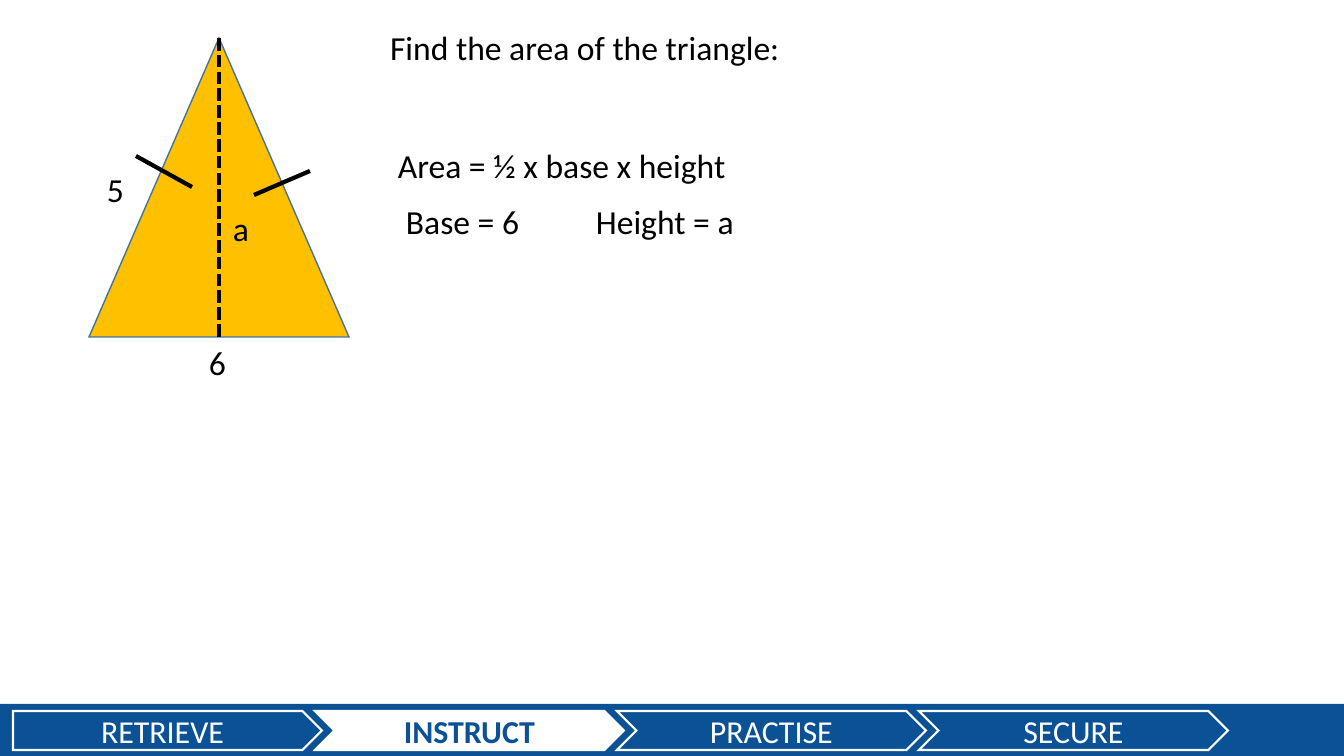
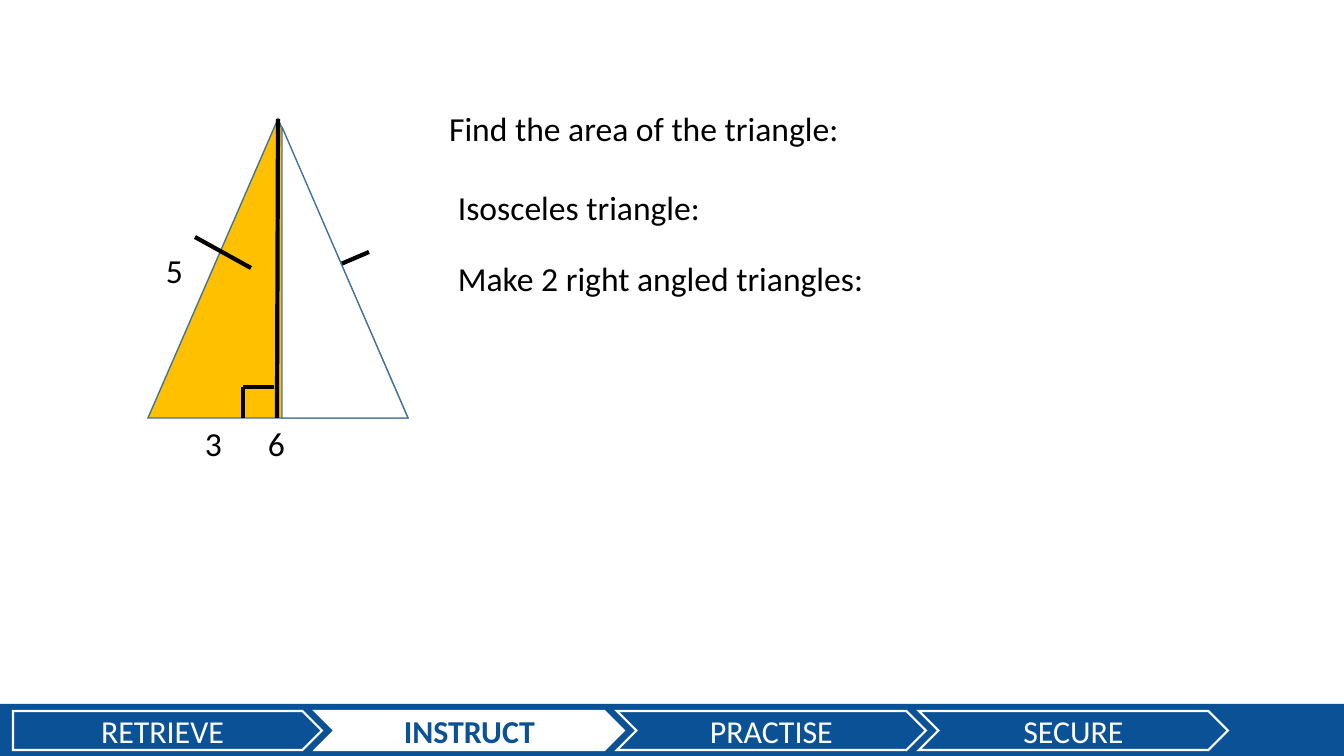
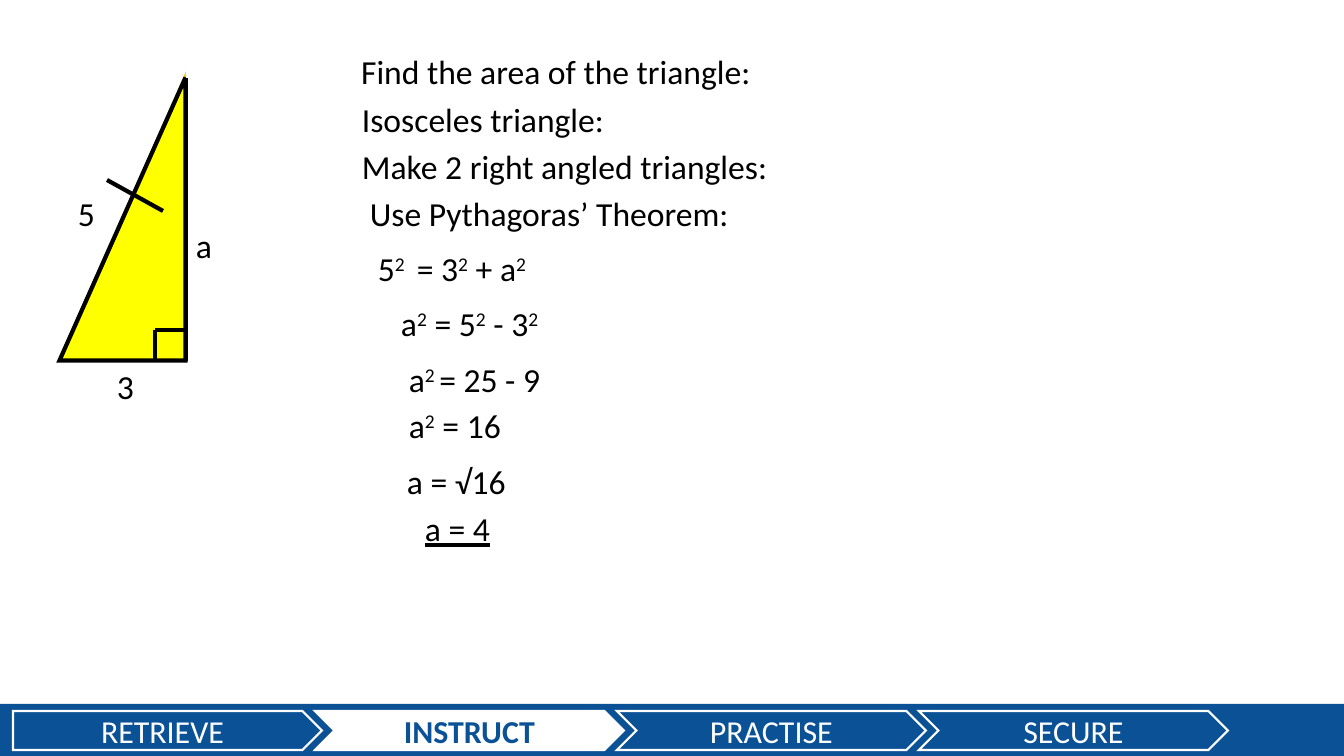
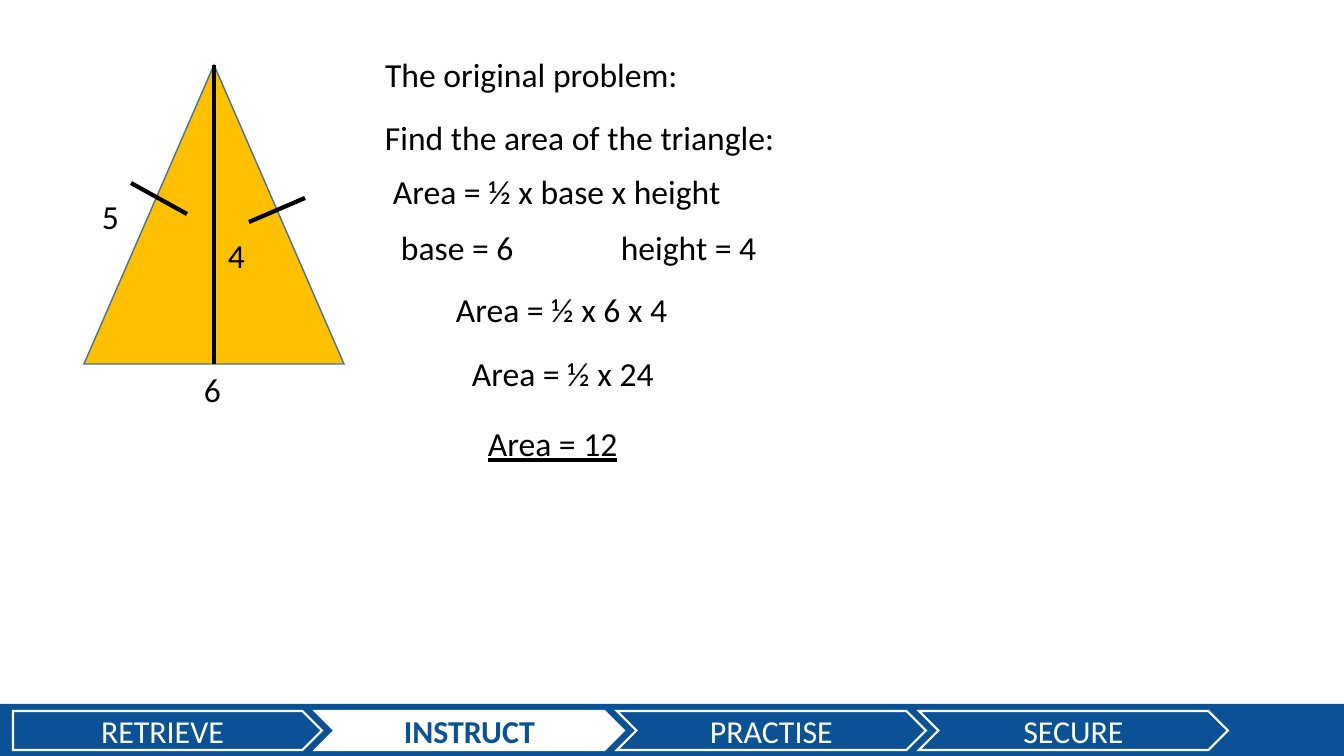
"""Build four lesson slides on the area of an isosceles triangle."""
from dataclasses import dataclass
from typing import Optional, Union

from lxml.etree import SubElement
from pptx import Presentation
from pptx.dml.color import RGBColor
from pptx.enum.dml import MSO_LINE
from pptx.enum.shapes import MSO_CONNECTOR, MSO_SHAPE
from pptx.enum.text import MSO_ANCHOR as Anchor
from pptx.enum.text import MSO_AUTO_SIZE as AutoSize
from pptx.enum.text import PP_ALIGN as Align
from pptx.oxml.ns import qn
from pptx.shapes.autoshape import Shape
from pptx.slide import Slide, SlideLayout
from pptx.text.text import TextFrame
from pptx.util import Emu, Pt


@dataclass(frozen=True)
class Theme:
    """Colours as hex strings, type sizes and line widths in points."""

    font: str = "Calibri"
    ink: str = "000000"
    white: str = "FFFFFF"
    band: str = "0B5196"
    gold: str = "FFC000"
    yellow: str = "FFFF00"
    outline: str = "43739E"
    body_size: float = 24
    stage_size: float = 22.8
    hairline: float = 1
    stage_line: float = 1.5
    mark_line: float = 2.25
    heavy_line: float = 3


@dataclass(frozen=True)
class Run:
    """A stretch of text with one format."""

    text: str
    raised: bool = False
    underlined: bool = False


@dataclass(frozen=True)
class Working:
    """A line of working, placed on the slide."""

    left: int
    top: int
    width: int
    runs: tuple[Run, ...]
    wraps: bool = False


@dataclass(frozen=True)
class Area:
    """A filled outline, placed from the figure's corner."""

    kind: MSO_SHAPE
    left: int
    top: int
    width: int
    height: int
    fill: str
    line: Optional[str] = None
    weight: float = 0
    rotation: int = 0


@dataclass(frozen=True)
class Stroke:
    """A straight line, placed from the figure's corner."""

    x1: int
    y1: int
    x2: int
    y2: int
    weight: float
    dashed: bool = False


@dataclass(frozen=True)
class Label:
    """A side length, placed from the figure's corner."""

    left: int
    top: int
    text: str


Part = Union[Area, Stroke, Label]


@dataclass(frozen=True)
class Lesson:
    """One slide: its heading, figure and working."""

    heading: str
    heading_width: int
    origin: tuple[int, int]
    figure: tuple[Part, ...]
    workings: tuple[Working, ...]


THEME = Theme()
PX_PER_INCH = 100.8
SLIDE_SIZE = (1344, 756)
LINE_HEIGHT = 50
LABEL_WIDTH = 37
HEADING_OFFSET = (291, -16)
STAGES = ("RETRIEVE", "INSTRUCT", "PRACTISE", "SECURE")
CURRENT_STAGE = "INSTRUCT"

FIND_AREA = "Find the area of the triangle:"
FIND_WIDTH = 413

ISOSCELES = Area(MSO_SHAPE.ISOSCELES_TRIANGLE, 0, 0, 260, 299,
                 THEME.gold, THEME.outline, THEME.hairline)
LEFT_TICK = Stroke(47, 118, 103, 149, THEME.heavy_line)
RIGHT_TICK = Stroke(165, 157, 221, 133, THEME.heavy_line)
RIGHT_ANGLE = (
    Stroke(126, 268, 95, 268, THEME.mark_line),
    Stroke(95, 299, 95, 268, THEME.mark_line),
)
SIDE = Label(8, 126, "5")
BASE = Label(110, 299, "6")
HALF_BASE = Label(47, 299, "3")
WHOLE = (ISOSCELES, LEFT_TICK, RIGHT_TICK, SIDE, BASE)


def px(length: float) -> Emu:
    """Turn px into EMU."""
    return Emu(round(length * 914400 / PX_PER_INCH))


def plain(left: int, top: int, width: int, text: str,
          underlined: bool = False) -> Working:
    """Make a line of working from a single run."""
    return Working(left, top, width, (Run(text, underlined=underlined),))


def powers(*texts: str) -> tuple[Run, ...]:
    """Make runs that alternate between normal and raised text."""
    return tuple(Run(text, raised=i % 2 == 1) for i, text in enumerate(texts))


LESSONS = (
    Lesson(
        FIND_AREA, FIND_WIDTH, (89, 38),
        WHOLE + (Stroke(130, 0, 130, 299, THEME.heavy_line, dashed=True),
                 Label(134, 165, "a")),
        (
            plain(388, 140, 351, "Area = ½ x base x height"),
            plain(396, 196, 134, "Base = 6"),
            plain(586, 196, 159, "Height = a"),
        ),
    ),
    Lesson(
        FIND_AREA, FIND_WIDTH, (148, 119),
        WHOLE + (Stroke(130, 0, 129, 299, THEME.heavy_line),) + RIGHT_ANGLE
        + (HALF_BASE,
           Area(MSO_SHAPE.RIGHT_TRIANGLE, 134, 8, 126, 291,
                THEME.white, THEME.outline, THEME.hairline)),
        (
            plain(448, 182, 265, "Isosceles triangle:"),
            plain(448, 253, 429, "Make 2 right angled triangles:"),
        ),
    ),
    Lesson(
        FIND_AREA, FIND_WIDTH, (60, 62),
        (
            Area(MSO_SHAPE.ISOSCELES_TRIANGLE, 0, 0, 260, 299, THEME.gold),
            SIDE, HALF_BASE,
            Area(MSO_SHAPE.RIGHT_TRIANGLE, -79, 94, 283, 126, THEME.yellow,
                 THEME.ink, THEME.heavy_line, rotation=270),
            LEFT_TICK, *RIGHT_ANGLE,
            Area(MSO_SHAPE.RIGHT_TRIANGLE, 126, -8, 205, 307, THEME.white),
            Stroke(126, 16, 126, 299, THEME.heavy_line),
            Label(126, 158, "a"),
        ),
        (
            plain(352, 94, 265, "Isosceles triangle:"),
            plain(352, 141, 429, "Make 2 right angled triangles:"),
            plain(360, 188, 382, "Use Pythagoras’ Theorem:"),
            Working(368, 243, 174, powers("5", "2 ", " = 3", "2", " + a", "2")),
            Working(391, 298, 236, powers("a", "2", " = 5", "2", " - 3", "2"),
                    wraps=True),
            Working(399, 354, 307, powers("a", "2 ", "= 25 - 9"), wraps=True),
            Working(399, 400, 125, powers("a", "2", " = 16")),
            Working(397, 456, 316, powers("a = √16"), wraps=True),
            plain(415, 503, 86, "a = 4", underlined=True),
        ),
    ),
    Lesson(
        "The original problem:", 316, (84, 65),
        WHOLE + (Stroke(130, 0, 130, 299, THEME.heavy_line),
                 Label(134, 165, "4")),
        (
            plain(375, 112, FIND_WIDTH, FIND_AREA),
            plain(383, 166, 351, "Area = ½ x base x height"),
            plain(391, 222, 134, "base = 6"),
            plain(611, 222, 157, "height = 4"),
            plain(446, 284, 234, "Area = ½ x 6 x 4"),
            plain(462, 348, 204, "Area = ½ x 24"),
            plain(478, 418, 151, "Area = 12", underlined=True),
        ),
    ),
)


def write(frame: TextFrame, runs: tuple[Run, ...], size: float, colour: str,
          align: Align = Align.LEFT, bold: bool = False) -> None:
    """Write runs into the first paragraph of a frame."""
    paragraph = frame.paragraphs[0]
    paragraph.alignment = align
    for part in runs:
        run = paragraph.add_run()
        run.text = part.text
        font = run.font
        font.name, font.size, font.bold = THEME.font, Pt(size), bold
        font.color.rgb = RGBColor.from_string(colour)
        if part.underlined:
            font.underline = True
        if part.raised:
            run._r.get_or_add_rPr().set("baseline", "30000")


def draw_area(slide: Slide, area: Area, origin: tuple[int, int] = (0, 0)) -> Shape:
    """Draw a filled outline."""
    shape = slide.shapes.add_shape(
        area.kind, px(origin[0] + area.left), px(origin[1] + area.top),
        px(area.width), px(area.height))
    shape.shadow.inherit = False
    shape.rotation = area.rotation
    shape.fill.solid()
    shape.fill.fore_color.rgb = RGBColor.from_string(area.fill)
    if area.line is None:
        shape.line.fill.background()
    else:
        shape.line.color.rgb = RGBColor.from_string(area.line)
        shape.line.width = Pt(area.weight)
        SubElement(shape.element.spPr.get_or_add_ln(), qn("a:miter"), lim="800000")
    return shape


def draw_stroke(slide: Slide, stroke: Stroke, origin: tuple[int, int]) -> None:
    """Draw a straight black line."""
    x, y = origin
    connector = slide.shapes.add_connector(
        MSO_CONNECTOR.STRAIGHT, px(x + stroke.x1), px(y + stroke.y1),
        px(x + stroke.x2), px(y + stroke.y2))
    connector.line.color.rgb = RGBColor.from_string(THEME.ink)
    connector.line.width = Pt(stroke.weight)
    if stroke.dashed:
        connector.line.dash_style = MSO_LINE.SQUARE_DOT
    SubElement(connector.element.spPr, qn("a:effectLst"))


def draw_working(slide: Slide, working: Working) -> None:
    """Draw a line of text in its own box."""
    box = slide.shapes.add_textbox(
        px(working.left), px(working.top), px(working.width), px(LINE_HEIGHT))
    frame = box.text_frame
    frame.word_wrap = working.wraps
    frame.auto_size = AutoSize.SHAPE_TO_FIT_TEXT
    write(frame, working.runs, THEME.body_size, THEME.ink)


def draw_heading(slide: Slide, lesson: Lesson) -> None:
    """Place and format the title beside the figure."""
    title = slide.shapes.title
    title.left = px(lesson.origin[0] + HEADING_OFFSET[0])
    title.top = px(lesson.origin[1] + HEADING_OFFSET[1])
    title.width, title.height = px(lesson.heading_width), px(LINE_HEIGHT)
    frame = title.text_frame
    frame.word_wrap = False
    frame.auto_size = AutoSize.NONE
    frame.vertical_anchor = Anchor.TOP
    write(frame, (Run(lesson.heading),), THEME.body_size, THEME.ink)


def draw_figure(slide: Slide, lesson: Lesson) -> None:
    """Draw the parts of the figure from back to front."""
    x, y = lesson.origin
    for part in lesson.figure:
        if isinstance(part, Area):
            draw_area(slide, part, lesson.origin)
        elif isinstance(part, Stroke):
            draw_stroke(slide, part, lesson.origin)
        else:
            draw_working(slide, plain(x + part.left, y + part.top,
                                      LABEL_WIDTH, part.text))


def draw_stage_band(slide: Slide) -> list[Shape]:
    """Draw the band of lesson stages."""
    band = [draw_area(slide, Area(MSO_SHAPE.RECTANGLE, 0, 704, SLIDE_SIZE[0], 52,
                                  THEME.band))]
    for i, name in enumerate(STAGES):
        current = name == CURRENT_STAGE
        fill, ink = ((THEME.white, THEME.band) if current
                     else (THEME.band, THEME.white))
        kind = MSO_SHAPE.CHEVRON if i else MSO_SHAPE.PENTAGON
        stage = draw_area(slide, Area(kind, 13 + 302 * i, 711, 309, 39, fill,
                                      THEME.white, THEME.stage_line))
        stage.text_frame.vertical_anchor = Anchor.MIDDLE
        write(stage.text_frame, (Run(name),), THEME.stage_size, ink,
              Align.CENTER, bold=current)
        band.append(stage)
    return band


def share_band(layout: SlideLayout, slide: Slide) -> None:
    """Put the stage band on the layout in place of its footers."""
    for placeholder in list(layout.placeholders)[1:]:
        layout.shapes.element.remove(placeholder.element)
    for shape in draw_stage_band(slide):
        layout.shapes.element.append(shape.element)


def main() -> None:
    """Build and save the lesson."""
    deck = Presentation()
    deck.slide_width, deck.slide_height = (px(side) for side in SLIDE_SIZE)
    layout = deck.slide_layouts[5]
    for i, lesson in enumerate(LESSONS):
        slide = deck.slides.add_slide(layout)
        if i == 0:
            share_band(layout, slide)
        draw_heading(slide, lesson)
        draw_figure(slide, lesson)
        for working in lesson.workings:
            draw_working(slide, working)
    deck.save("out.pptx")


if __name__ == "__main__":
    main()
